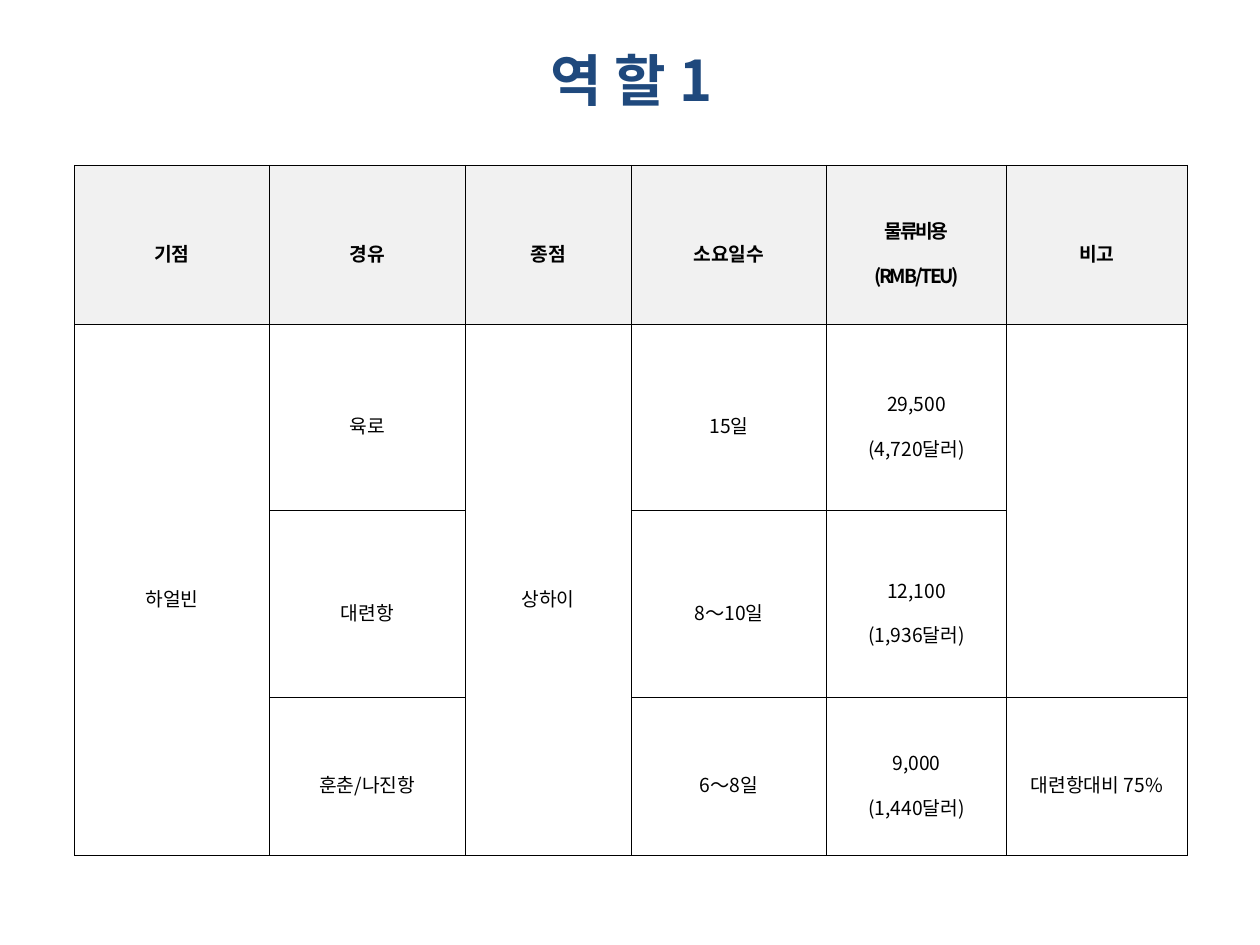
"""Build a slide with a table of freight routes, times and costs."""
from lxml.etree import SubElement
from pptx import Presentation
from pptx.dml.color import RGBColor
from pptx.enum.text import MSO_ANCHOR, PP_ALIGN
from pptx.oxml.ns import qn
from pptx.util import Inches, Pt

FONT = "Noto Sans CJK KR"
HUES = {"title": "1F497D", "text": "000000", "head": "F1F1F1", "line": "000000"}
TITLE = "역 할 1"
ROWS = [
    ["기점", "경유", "종점", "소요일수", "물류비용\n(RMB/TEU)", "비고"],
    ["하얼빈", "육로", "상하이", "15일", "29,500\n(4,720달러)", ""],
    ["", "대련항", "", "8～10일", "12,100\n(1,936달러)", ""],
    ["", "훈춘/나진항", "", "6～8일", "9,000\n(1,440달러)", "대련항대비 75%"],
]
SPANS = [(1, 0, 3), (1, 2, 3), (1, 5, 2)]
TIGHT = (0, 4)
WIDE = [1.55, 1.55, 1.32, 1.55, 1.43, 1.43]
HIGH = [1.26, 1.48, 1.48, 1.26]
LEFT, TOP = 0.59, 1.31
CELL = {
    "vertical_anchor": MSO_ANCHOR.MIDDLE,
    "margin_left": Inches(0.07), "margin_right": Inches(0.07),
    "margin_top": Inches(0.02), "margin_bottom": Inches(0.02),
}
PARA = {"alignment": PP_ALIGN.CENTER, "line_spacing": 1.6}


def apply(obj, vals):
    for key, val in vals.items():
        setattr(obj, key, val)


def style(run, size, bold, hue):
    apply(run.font, {"name": FONT, "size": Pt(size), "bold": bold})
    run.font.color.rgb = RGBColor.from_string(HUES[hue])
    SubElement(run.font._element, qn("a:ea"), typeface=FONT)


def edge(cell):
    props = cell._tc.get_or_add_tcPr()
    for side in ("lnL", "lnR", "lnT", "lnB"):
        line = SubElement(props, qn("a:" + side), w=str(int(Pt(0.28))))
        fill = SubElement(line, qn("a:solidFill"))
        SubElement(fill, qn("a:srgbClr"), val=HUES["line"])


def put_title(slide):
    title = slide.shapes.title
    apply(title, {"left": Inches(0.51), "top": 0,
                  "width": Inches(9), "height": Inches(1.25)})
    frame = title.text_frame
    frame.text = TITLE
    frame.vertical_anchor = MSO_ANCHOR.MIDDLE
    para = frame.paragraphs[0]
    para.alignment = PP_ALIGN.CENTER
    style(para.runs[0], 32, True, "title")


def put_cell(cell, text, row, col):
    apply(cell, CELL)
    edge(cell)
    if row == 0:
        cell.fill.solid()
        cell.fill.fore_color.rgb = RGBColor.from_string(HUES["head"])
    else:
        cell.fill.background()
    cell.text = text
    for para in cell.text_frame.paragraphs:
        apply(para, PARA)
        for run in para.runs:
            style(run, 11, row == 0, "text")
            if (row, col) == TIGHT:
                run.font._element.set("spc", "-130")


def put_table(slide):
    box = [Inches(n) for n in (LEFT, TOP, sum(WIDE), sum(HIGH))]
    table = slide.shapes.add_table(len(HIGH), len(WIDE), *box).table
    for col, wide in zip(table.columns, WIDE):
        col.width = Inches(wide)
    for row, high in zip(table.rows, HIGH):
        row.height = Inches(high)
    for r, line in enumerate(ROWS):
        for c, text in enumerate(line):
            put_cell(table.cell(r, c), text, r, c)
    for r, c, span in SPANS:
        table.cell(r, c).merge(table.cell(r + span - 1, c))


def main():
    deck = Presentation()
    apply(deck, {"slide_width": Inches(10), "slide_height": Inches(7.5)})
    slide = deck.slides.add_slide(deck.slide_layouts[5])
    put_title(slide)
    put_table(slide)
    deck.save("out.pptx")


if __name__ == "__main__":
    main()
